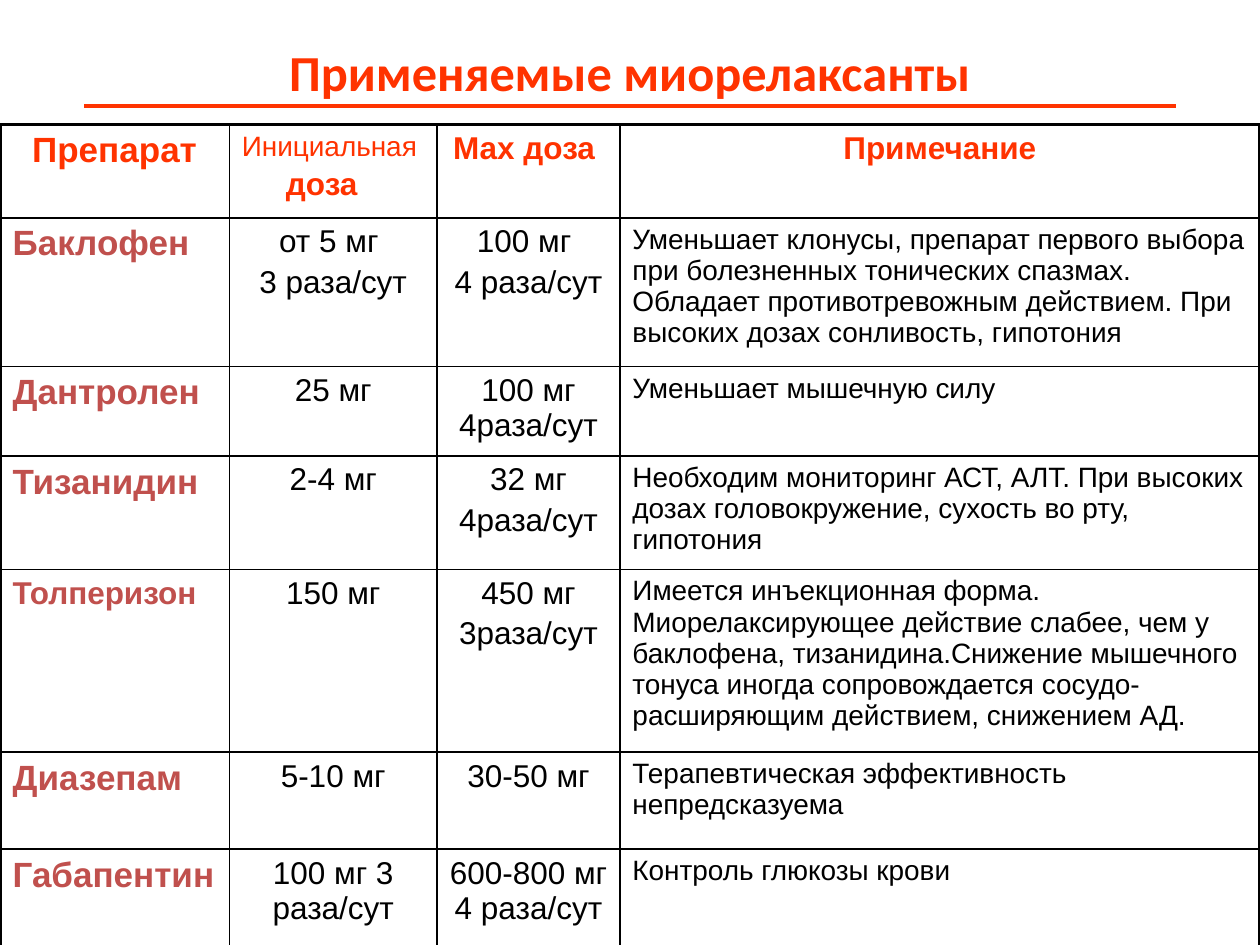
import pptx
import pptx.dml.color
import pptx.enum.shapes
import pptx.enum.text
import pptx.oxml.ns
import pptx.util
from lxml import etree

Inches = pptx.util.Inches
Pt = pptx.util.Pt
RGBColor = pptx.dml.color.RGBColor
ALIGN = pptx.enum.text.PP_ALIGN
qn = pptx.oxml.ns.qn

ORANGE = RGBColor(0xFF, 0x33, 0x00)
RED = RGBColor(0xC0, 0x50, 0x4D)
BLACK = RGBColor(0x00, 0x00, 0x00)

COL_WIDTHS = [1.82, 1.65, 1.45, 5.08]
ROW_HEIGHTS = [0.74, 1.18, 0.71, 0.9, 1.45, 0.77, 0.82]
THIN, THICK = 1, 2.25

# Name, initial dose, maximum dose, note; a line break starts a new paragraph.
DRUGS = [
    ("Баклофен", "от 5 мг \n3 раза/сут", "100 мг \n4 раза/сут",
     "Уменьшает клонусы, препарат первого выбора при болезненных тонических "
     "спазмах. Обладает противотревожным действием. При высоких дозах "
     "сонливость, гипотония"),
    ("Дантролен", "25 мг", "100 мг 4раза/сут", "Уменьшает мышечную силу"),
    ("Тизанидин", "2-4 мг", "32 мг\n4раза/сут",
     "Необходим мониторинг АСТ, АЛТ. При высоких дозах головокружение, "
     "сухость во рту, гипотония"),
    ("Толперизон", "150 мг", "450 мг\n3раза/сут",
     "Имеется инъекционная форма. Миорелаксирующее действие слабее, чем у "
     "баклофена, тизанидина.Снижение мышечного тонуса иногда сопровождается "
     "сосудо-расширяющим действием, снижением АД."),
    ("Диазепам", "5-10 мг", "30-50 мг",
     "Терапевтическая эффективность непредсказуема"),
    ("Габапентин", "100 мг 3 раза/сут", "600-800 мг 4 раза/сут",
     "Контроль глюкозы крови"),
]


def write(tf, text, size=18, color=BLACK, bold=False, align=ALIGN.LEFT,
          font="Arial"):
    tf.word_wrap = True
    for i, line in enumerate(text.split("\n")):
        p = tf.add_paragraph() if i else tf.paragraphs[0]
        p.alignment = align
        if i:
            p.space_before = Pt(3)
        r = p.add_run()
        r.text = line
        r.font.size = Pt(size)
        r.font.name = font
        r.font.bold = bold
        r.font.color.rgb = color


def set_borders(cell, widths):
    """Draw black borders; widths are points for left, right, top, bottom."""
    tcPr = cell._tc.get_or_add_tcPr()
    for i, (side, width) in enumerate(zip("LRTB", widths)):
        ln = etree.Element(qn(f"a:ln{side}"), w=str(Pt(width)))
        fill = etree.SubElement(ln, qn("a:solidFill"))
        etree.SubElement(fill, qn("a:srgbClr"), val=str(BLACK))
        tcPr.insert(i, ln)


def add_title(slide):
    sp = slide.shapes.title
    sp.left, sp.top = Inches(0.5), Inches(0.3)
    sp.width, sp.height = Inches(9), Inches(0.54)
    tf = sp.text_frame
    tf.auto_size = pptx.enum.text.MSO_AUTO_SIZE.NONE
    tf.vertical_anchor = pptx.enum.text.MSO_ANCHOR.MIDDLE
    write(tf, "Применяемые миорелаксанты", size=28.8, color=ORANGE, bold=True,
          align=ALIGN.CENTER, font="Calibri")


def add_grid(slide):
    """Add the empty table with its sizes, margins and borders."""
    n_rows, n_cols = len(ROW_HEIGHTS), len(COL_WIDTHS)
    table = slide.shapes.add_table(
        n_rows, n_cols, Inches(0), Inches(0.99),
        Inches(sum(COL_WIDTHS)), Inches(sum(ROW_HEIGHTS))).table
    table.first_row = table.horz_banding = False
    for col, width in zip(table.columns, COL_WIDTHS):
        col.width = Inches(width)
    for r, height in enumerate(ROW_HEIGHTS):
        table.rows[r].height = Inches(height)
        for c in range(n_cols):
            cell = table.cell(r, c)
            cell.margin_left = cell.margin_right = Inches(0.1)
            cell.margin_top = cell.margin_bottom = Inches(0.05)
            cell.fill.background()
            outer = (c == 0, c == n_cols - 1, r == 0, r == n_rows - 1)
            set_borders(cell, [THICK if edge else THIN for edge in outer])
    return table


def fill_header(table):
    frames = [cell.text_frame for cell in table.rows[0].cells]
    style = dict(color=ORANGE, bold=True, align=ALIGN.CENTER)
    write(frames[0], "Препарат", size=20, **style)
    write(frames[1], "Инициальная\nдоза", color=ORANGE)
    first, second = frames[1].paragraphs
    first.runs[0].font.size = Pt(16)
    second.runs[0].font.bold = True
    second._p.get_or_add_pPr().set("marL", str(Inches(0.35)))
    write(frames[2], "Мах доза ", **style)
    write(frames[3], "Примечание", **style)


def fill_drugs(table):
    for r, (name, initial, maximum, note) in enumerate(DRUGS, start=1):
        frames = [cell.text_frame for cell in table.rows[r].cells]
        write(frames[0], name, size=18 if name == "Толперизон" else 20,
              color=RED, bold=True)
        write(frames[1], initial, align=ALIGN.CENTER)
        write(frames[2], maximum, align=ALIGN.CENTER)
        write(frames[3], note, size=16)


def add_rule(slide):
    line = slide.shapes.add_connector(
        pptx.enum.shapes.MSO_CONNECTOR.STRAIGHT,
        Inches(0.67), Inches(0.84), Inches(9.33), Inches(0.84))
    line.line.color.rgb = ORANGE
    line.line.width = Pt(2.25)
    etree.SubElement(line._element.spPr, qn("a:effectLst"))


def main():
    prs = pptx.Presentation()
    prs.slide_width, prs.slide_height = Inches(10), Inches(7.5)
    slide = prs.slides.add_slide(prs.slide_layouts[5])
    add_title(slide)
    table = add_grid(slide)
    fill_header(table)
    fill_drugs(table)
    add_rule(slide)
    prs.save("out.pptx")


if __name__ == "__main__":
    main()
